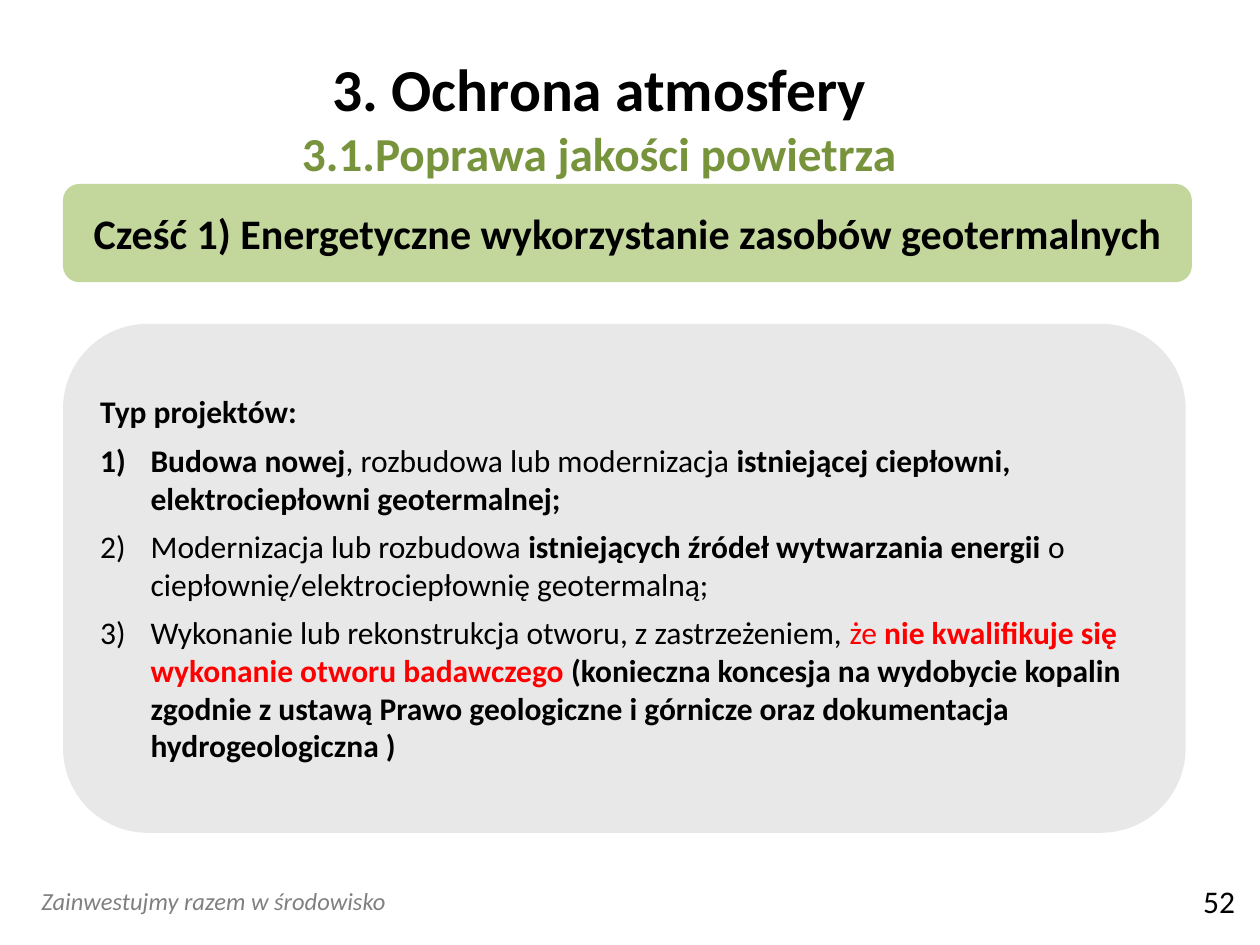
from lxml.etree import SubElement
from pptx import Presentation
from pptx.dml.color import RGBColor
from pptx.enum.shapes import MSO_SHAPE as Shape
from pptx.enum.text import MSO_ANCHOR as Anchor, MSO_AUTO_SIZE as AutoSize, PP_ALIGN as Align
from pptx.oxml.ns import qn
from pptx.util import Inches, Pt

FONT = "Calibri"
BLACK = RGBColor(0x00, 0x00, 0x00)
RED = RGBColor(0xFF, 0x00, 0x00)
GRAY = RGBColor(0x80, 0x80, 0x80)
GREEN = RGBColor(0x77, 0x93, 0x3C)
LIGHT_GREEN = RGBColor(0xC3, 0xD6, 0x9B)
LIGHT_GRAY = RGBColor(0xD9, 0xD9, 0xD9)

WIDTH, HEIGHT = 10, 7.5
LEFT = 0.05 * WIDTH
INDENT = 0.04 * WIDTH

PROJECTS = [
    [("Budowa nowej", True, BLACK),
     (", rozbudowa lub modernizacja ", False, BLACK),
     ("istniejącej ciepłowni, elektrociepłowni geotermalnej;", True, BLACK)],
    [("Modernizacja lub rozbudowa ", False, BLACK),
     ("istniejących źródeł wytwarzania energii ", True, BLACK),
     ("o ciepłownię/elektrociepłownię geotermalną;", False, BLACK)],
    [("Wykonanie lub rekonstrukcja otworu, z zastrzeżeniem, ", False, BLACK),
     ("że ", False, RED),
     ("nie kwalifikuje się wykonanie otworu badawczego", True, RED),
     (" (konieczna koncesja na wydobycie kopalin zgodnie z ustawą Prawo "
      "geologiczne i górnicze oraz dokumentacja hydrogeologiczna )", True, BLACK)],
]


def set_font(font, size, color=BLACK, bold=False, italic=False):
    font.name = FONT
    font.size = Pt(size)
    font.color.rgb = color
    font.bold = bold
    font.italic = italic


def add_span(para, text, size, bold, color):
    span = para.add_run()
    span.text = text
    set_font(span.font, size, color, bold)


def add_panel(page, left, top, width, height, color):
    panel = page.shapes.add_shape(
        Shape.ROUNDED_RECTANGLE, Inches(left), Inches(top), Inches(width), Inches(height))
    panel.shadow.inherit = False
    panel.fill.solid()
    panel.fill.fore_color.rgb = color
    panel.line.fill.background()
    panel.text_frame.word_wrap = True
    panel.text_frame.vertical_anchor = Anchor.MIDDLE
    return panel


def set_opacity(panel, percent):
    color = panel.fill._xPr.find(".//" + qn("a:srgbClr"))
    SubElement(color, qn("a:alpha")).set("val", str(percent * 1000))


def add_label(page, left, top, width, height, text, size, **style):
    box = page.shapes.add_textbox(Inches(left), Inches(top), Inches(width), Inches(height))
    box.text_frame.word_wrap = True
    para = box.text_frame.paragraphs[0]
    para.text = text
    set_font(para.font, size, **style)


def number_paragraph(para):
    properties = para._p.get_or_add_pPr()
    properties.set("marL", str(Inches(INDENT)))
    properties.set("indent", str(-Inches(INDENT)))
    SubElement(properties, qn("a:buFont")).set("typeface", FONT)
    SubElement(properties, qn("a:buAutoNum")).set("type", "arabicParenR")


def format_title(page):
    title = page.shapes.title
    title.left, title.top, title.width, title.height = map(Inches, (0.59, 0.3, 8.33, 1.25))
    frame = title.text_frame
    frame.auto_size = AutoSize.NONE
    frame.vertical_anchor = Anchor.MIDDLE
    para = frame.paragraphs[0]
    para.alignment = Align.CENTER
    add_span(para, "3. Ochrona atmosfery", 34, True, BLACK)
    para.add_line_break()
    add_span(para, "3.1.Poprawa jakości powietrza", 27, True, GREEN)


def add_heading(page):
    panel = add_panel(page, LEFT, 1.46, 8.96, 0.78, LIGHT_GREEN)
    para = panel.text_frame.paragraphs[0]
    para.text = "Cześć 1) Energetyczne wykorzystanie zasobów geotermalnych"
    para.alignment = Align.CENTER
    set_font(para.font, 24, bold=True)


def add_projects(page):
    panel = add_panel(page, LEFT, 2.57, 8.91, 4.04, LIGHT_GRAY)
    set_opacity(panel, 59)
    frame = panel.text_frame
    intro = frame.paragraphs[0]
    intro.text = "Typ projektów:"
    intro.alignment = Align.LEFT
    set_font(intro.font, 18, bold=True)
    for project in PROJECTS:
        para = frame.add_paragraph()
        para.alignment = Align.LEFT
        para.space_before = Pt(6)
        number_paragraph(para)
        for text, bold, color in project:
            add_span(para, text, 18, bold, color)


def main():
    deck = Presentation()
    deck.slide_width, deck.slide_height = Inches(WIDTH), Inches(HEIGHT)
    page = deck.slides.add_slide(deck.slide_layouts[5])
    add_label(page, 0.23, 6.98, 4.22, 0.34, "Zainwestujmy razem w środowisko", 14,
              color=GRAY, italic=True)
    add_projects(page)
    add_label(page, 9.45, 6.95, 0.55, 0.4, "52", 18)
    format_title(page)
    add_heading(page)
    deck.save("out.pptx")


if __name__ == "__main__":
    main()
